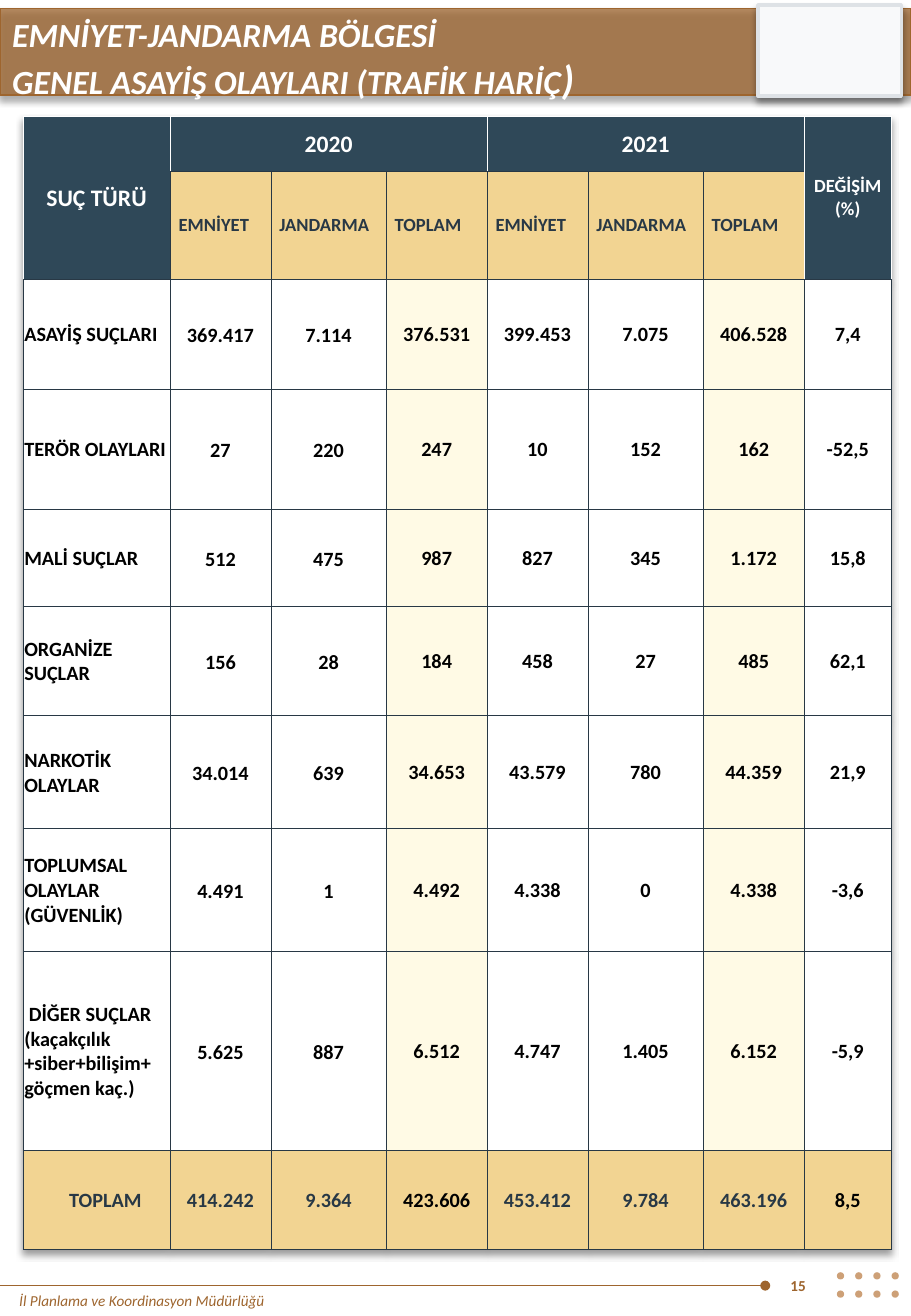
from dataclasses import dataclass

from lxml import etree
from pptx import Presentation
from pptx.dml.color import RGBColor
from pptx.enum import shapes, text
from pptx.oxml import ns
from pptx.util import Inches, Pt

TITLE = "EMNİYET-JANDARMA BÖLGESİ\nGENEL ASAYİŞ OLAYLARI (TRAFİK HARİÇ"
TITLE_END = ")"
FOOTER = "İl Planlama ve Koordinasyon Müdürlüğü"
PAGE_NUMBER = "15"

YEARS = ["2020", "2021"]
FORCES = ["EMNİYET", "JANDARMA", "TOPLAM"]
ROWS = [
    ["SUÇ TÜRÜ", YEARS[0], "", "", YEARS[1], "", "", "DEĞİŞİM\n(%)"],
    ["", *FORCES * len(YEARS), ""],
    ["ASAYİŞ SUÇLARI", "369.417", "7.114", "376.531", "399.453", "7.075", "406.528", "7,4"],
    ["TERÖR OLAYLARI", "27", "220", "247", "10", "152", "162", "-52,5"],
    ["MALİ SUÇLAR", "512", "475", "987", "827", "345", "1.172", "15,8"],
    ["ORGANİZE SUÇLAR", "156", "28", "184", "458", "27", "485", "62,1"],
    ["NARKOTİK OLAYLAR", "34.014", "639", "34.653", "43.579", "780", "44.359", "21,9"],
    ["TOPLUMSAL OLAYLAR (GÜVENLİK)", "4.491", "1", "4.492", "4.338", "0", "4.338", "-3,6"],
    [" DİĞER SUÇLAR (kaçakçılık +siber+bilişim+ göçmen kaç.)",
     "5.625", "887", "6.512", "4.747", "1.405", "6.152", "-5,9"],
    ["TOPLAM", "414.242", "9.364", "423.606", "453.412", "9.784", "463.196", "8,5"],
]
MERGES = [((0, 0), (1, 0)), ((0, 1), (0, 3)), ((0, 4), (0, 6)), ((0, 7), (1, 7))]
COLUMN_WIDTHS = [1.21, *[0.83, 0.95, 0.83] * len(YEARS), 0.72]
ROW_HEIGHTS = [0.45, 0.89, 0.9, 0.99, 0.8, 0.9, 0.93, 1.01, 1.64, 0.81]
TOTAL_ROW, CHANGE_COLUMN, SUM_COLUMNS = len(ROWS) - 1, 7, (3, 6)


@dataclass(frozen=True)
class Theme:
    font: str = "Calibri"
    brown: str = "9E652E"
    tan: str = "CDA077"
    navy: str = "2F4858"
    ink: str = "283845"
    gold: str = "F2D492"
    cream: str = "FFFAE5"
    white: str = "FFFFFF"
    black: str = "000000"
    panel: str = "F8F9FA"
    panel_line: str = "DEE2E6"
    title: int = 20
    title_end: int = 24
    year: int = 14
    heading: int = 11
    body: int = 12
    small: int = 9


THEME = Theme()


def color(value):
    return RGBColor.from_string(value)


def add_xml(parent, tag, **attributes):
    return etree.SubElement(parent, ns.qn(tag), attributes)


def add_shadow(properties):
    """Append a soft downward shadow and return its effect list."""
    effects = add_xml(properties, "a:effectLst")
    shadow = add_xml(effects, "a:outerShdw", blurRad=str(Pt(4)), dist=str(Pt(3)),
                     dir="5400000", algn="t", rotWithShape="0")
    tint = add_xml(shadow, "a:srgbClr", val=THEME.black)
    add_xml(tint, "a:alpha", val="40000")
    return effects


def set_fonts(frame, size, tint, bold=False, italic=False, align=text.PP_ALIGN.LEFT):
    for para in frame.paragraphs:
        para.alignment = align
        font = para.font
        font.name, font.size, font.bold, font.italic = THEME.font, Pt(size), bold, italic
        font.color.rgb = color(tint)


def add_block(page, kind, bounds, fill, line=None, weight=1):
    shape = page.shapes.add_shape(kind, *map(Inches, bounds))
    shape.fill.solid()
    shape.fill.fore_color.rgb = color(fill)
    if line:
        shape.line.color.rgb = color(line)
        shape.line.width = Pt(weight)
        add_shadow(shape._element.spPr)
    else:
        shape.line.fill.background()
        shape.shadow.inherit = False
    return shape


def add_label(page, bounds, words, **style):
    box = page.shapes.add_textbox(*map(Inches, bounds))
    box.text_frame.word_wrap = True
    box.text_frame.text = words
    set_fonts(box.text_frame, THEME.small, THEME.brown, **style)
    return box


def add_header(page):
    rectangle = shapes.MSO_SHAPE.RECTANGLE
    band = add_block(page, rectangle, (0, 0.07, 7.5, 0.71), THEME.brown, THEME.brown)
    band_tint = band._element.spPr.find(ns.qn("a:solidFill"))[0]
    add_xml(band_tint, "a:alpha", val="75000")
    add_block(page, rectangle, (6.24, 0.04, 1.18, 0.75), THEME.panel, THEME.panel_line, 2)

    title = page.shapes.title
    title.left, title.top, title.width, title.height = map(Inches, (0, 0.06, 7.5, 0.84))
    frame = title.text_frame
    frame.text = TITLE
    frame.auto_size = text.MSO_AUTO_SIZE.SHAPE_TO_FIT_TEXT
    frame.vertical_anchor = text.MSO_ANCHOR.TOP
    set_fonts(frame, THEME.title, THEME.white, bold=True, italic=True)
    span = frame.paragraphs[-1].add_run()
    span.text = TITLE_END
    span.font.size = Pt(THEME.title_end)
    page.shapes._spTree.append(title._element)  # in front of the band


def add_footer(page):
    rule = page.shapes.add_connector(
        shapes.MSO_CONNECTOR.STRAIGHT, *map(Inches, (6.3, 10.58, 0, 10.58)))
    rule.line.color.rgb = color(THEME.brown)
    rule.line.width = Pt(0.5)
    add_xml(rule.line._get_or_add_ln(), "a:headEnd", type="oval")
    add_xml(rule._element.spPr, "a:effectLst")
    for column in range(4):
        for row in range(2):
            bounds = (6.89 + 0.15 * column, 10.47 + 0.15 * row, 0.06, 0.06)
            add_block(page, shapes.MSO_SHAPE.OVAL, bounds, THEME.tan)
    add_label(page, (0.06, 10.58, 4.69, 0.25), FOOTER, italic=True)
    number = add_label(page, (6.41, 10.37, 0.5, 0.42), PAGE_NUMBER, bold=True)
    number.text_frame.vertical_anchor = text.MSO_ANCHOR.MIDDLE


def cell_look(row, column):
    """Return fill, text colour, type size and whether the text is centred."""
    if row == 0 or row == 1 and column in (0, CHANGE_COLUMN):
        size = THEME.heading if column == CHANGE_COLUMN else THEME.year
        return THEME.navy, THEME.white, size, True
    if row == 1:
        return THEME.gold, THEME.ink, THEME.heading, False
    if row == TOTAL_ROW:
        tint = THEME.black if column in (3, CHANGE_COLUMN) else THEME.ink
        return THEME.gold, tint, THEME.body, column > 0
    fill = THEME.cream if column in SUM_COLUMNS else THEME.white
    return fill, THEME.black, THEME.body, column > 0


def set_borders(cell, side_color):
    """Draw the left, right and top edges in side_color, the bottom in ink."""
    properties = cell._tc.get_or_add_tcPr()
    edges = {"a:lnL": side_color, "a:lnR": side_color, "a:lnT": side_color, "a:lnB": THEME.ink}
    for position, (tag, tint) in enumerate(edges.items()):
        edge = add_xml(properties, tag, w=str(Pt(0.25)))
        add_xml(add_xml(edge, "a:solidFill"), "a:srgbClr", val=tint)
        properties.insert(position, edge)


def format_cell(cell, row, column):
    fill, tint, size, centred = cell_look(row, column)
    cell.text = ROWS[row][column]
    cell.vertical_anchor = text.MSO_ANCHOR.MIDDLE
    margins = (0.07, 0.04, 0.07, 0.04) if row < 2 else (0.01, 0.01, 0.01, 0)
    if (row, column) == (TOTAL_ROW, 0):
        margins = (0.38, *margins[1:])
    cell.margin_left, cell.margin_top, cell.margin_right, cell.margin_bottom = map(Inches, margins)
    align = text.PP_ALIGN.CENTER if centred else text.PP_ALIGN.LEFT
    set_fonts(cell.text_frame, size, tint, bold=True, align=align)
    if 1 < row < TOTAL_ROW and column in (1, 2):
        cell.text_frame.paragraphs[0].line_spacing = 1.07
    cell.fill.solid()
    cell.fill.fore_color.rgb = color(fill)
    set_borders(cell, THEME.white if fill == THEME.navy else THEME.ink)


def add_crime_table(page):
    bounds = (0.19, 0.96, sum(COLUMN_WIDTHS), sum(ROW_HEIGHTS))
    table = page.shapes.add_table(
        len(ROWS), len(COLUMN_WIDTHS), *map(Inches, bounds)).table
    table.first_row = table.horz_banding = False
    table_properties = table._tbl.tblPr
    table_properties.insert(0, add_shadow(table_properties))
    for column, width in zip(table.columns, COLUMN_WIDTHS):
        column.width = Inches(width)
    for row, height in zip(table.rows, ROW_HEIGHTS):
        row.height = Inches(height)
    for row in range(len(ROWS)):
        for column in range(len(COLUMN_WIDTHS)):
            format_cell(table.cell(row, column), row, column)
    for first, last in MERGES:
        table.cell(*first).merge(table.cell(*last))


def main():
    deck = Presentation()
    deck.slide_width, deck.slide_height = Inches(7.5), Inches(10.83)
    page = deck.slides.add_slide(deck.slide_layouts[5])
    add_header(page)
    add_footer(page)
    add_crime_table(page)
    deck.save("out.pptx")


if __name__ == "__main__":
    main()
